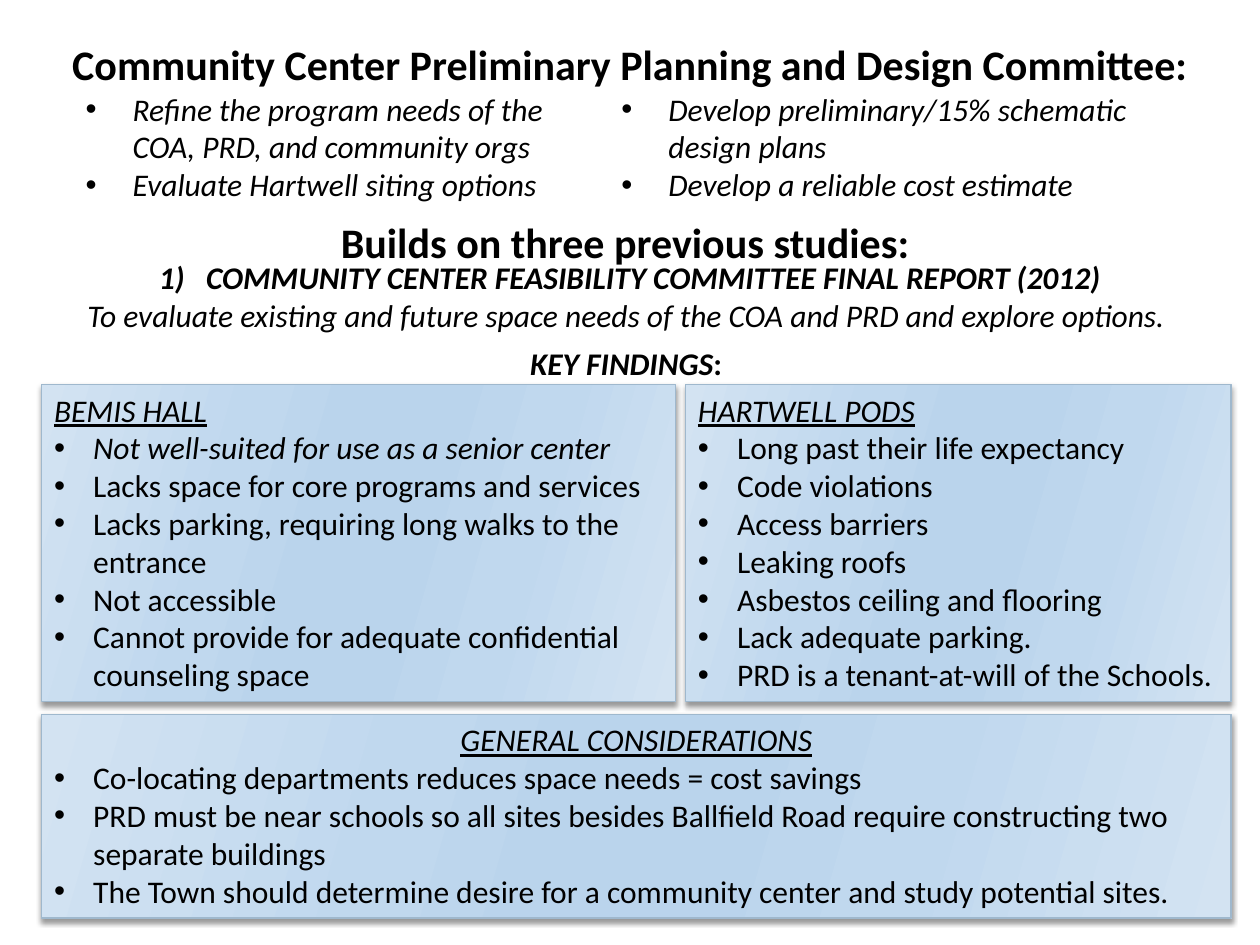
from lxml.etree import SubElement
from pptx import Presentation
from pptx.dml.color import RGBColor
from pptx.enum.shapes import MSO_SHAPE
from pptx.enum.text import MSO_ANCHOR, MSO_AUTO_SIZE as AutoSize, PP_ALIGN as Align
from pptx.oxml.ns import qn
from pptx.util import Cm, Pt

COLORS = {"text": "000000", "border": "9FB8CD", "shadow": "000000",
          "edge": "D3E3F2", "mid": "C0D8EE", "core": "BAD4EC"}
PANEL_STOPS = [(0, "edge"), (30, "mid"), (45, "core"),
               (55, "core"), (73, "mid"), (100, "edge")]
TITLE_SIZE, TEXT_SIZE = 24, 18
LIST_INDENT, PANEL_INDENT = 0.95, 0.79


def color_element(parent, name, opacity=None):
    color = SubElement(parent, qn("a:srgbClr"), val=COLORS[name])
    if opacity is not None:
        SubElement(color, qn("a:alpha"), val=str(opacity * 1000))


class SlideBuilder:
    def __init__(self, slide, font="Calibri"):
        self.slide = slide
        self.font = font

    def place(self, shape, box):
        shape.left, shape.top, shape.width, shape.height = map(Cm, box)
        frame = shape.text_frame
        frame.word_wrap = True
        frame.auto_size = AutoSize.SHAPE_TO_FIT_TEXT
        frame.vertical_anchor = MSO_ANCHOR.TOP
        return frame

    def paragraph(self, frame, runs, align=Align.LEFT, size=TEXT_SIZE,
                  bullet=None, indent=0):
        """Fill the empty first paragraph or add one; runs are (text, style letters)."""
        first = frame.paragraphs[0]
        para = frame.add_paragraph() if first.runs else first
        para.alignment = align
        para.space_before = Pt(0)
        props = para._p.get_or_add_pPr()
        props.set("marL", str(Cm(indent)))
        props.set("indent", str(-Cm(indent)))
        if bullet == "•":
            SubElement(props, qn("a:buFont"), typeface="Arial")
            SubElement(props, qn("a:buChar"), char=bullet)
        elif bullet:
            SubElement(props, qn("a:buAutoNum"), type=bullet)
        else:
            SubElement(props, qn("a:buNone"))
        for text, style in runs:
            run = para.add_run()
            run.text = text
            run.font.name = self.font
            run.font.size = Pt(size)
            run.font.bold = "b" in style
            run.font.italic = "i" in style
            run.font.underline = "u" in style
            run.font.color.rgb = RGBColor.from_string(COLORS["text"])

    def title(self, text, box):
        frame = self.place(self.slide.shapes.title, box)
        self.paragraph(frame, [(text, "b")], Align.CENTER, TITLE_SIZE)

    def body_list(self, index, items, box):
        frame = self.place(self.slide.placeholders[index], box)
        for item in items:
            self.paragraph(frame, [(item, "i")], bullet="•", indent=LIST_INDENT)

    def text(self, box, wrap=True):
        frame = self.place(self.slide.shapes.add_textbox(0, 0, 0, 0), box)
        frame.word_wrap = wrap
        return frame

    def panel(self, heading, items, box, heading_align=Align.LEFT):
        """Shaded box with an underlined heading; items are (text, style letters)."""
        shape = self.slide.shapes.add_shape(MSO_SHAPE.RECTANGLE, *map(Cm, box))
        shape.fill.gradient()
        shape.fill.gradient_angle = 360 - 16
        stops = shape._element.spPr.find(qn("a:gradFill")).find(qn("a:gsLst"))
        for stop in list(stops):
            stops.remove(stop)
        for position, name in PANEL_STOPS:
            color_element(SubElement(stops, qn("a:gs"), pos=str(position * 1000)), name)
        shape.line.color.rgb = RGBColor.from_string(COLORS["border"])
        shape.line.width = Pt(0.75)
        shape.shadow.inherit = False
        effects = shape._element.spPr.find(qn("a:effectLst"))
        shadow = SubElement(effects, qn("a:outerShdw"), blurRad=str(Pt(3)),
                            dist=str(Pt(2)), dir=str(90 * 60000), rotWithShape="0")
        color_element(shadow, "shadow", 40)
        frame = self.place(shape, box)
        self.paragraph(frame, [(heading, "iu")], heading_align)
        for text, style in items:
            self.paragraph(frame, [(text, style)], bullet="•", indent=PANEL_INDENT)


def main():
    prs = Presentation()
    prs.slide_width, prs.slide_height = Cm(25.4), Cm(19.05)
    builder = SlideBuilder(prs.slides.add_slide(prs.slide_layouts[3]))

    builder.title("Community Center Preliminary Planning and Design Committee:",
                  (0, 0.64, 25.4, 1.27))
    builder.body_list(1, ["Refine the program needs of the COA, PRD, and community orgs",
                          "Evaluate Hartwell siting options"],
                      (1.47, 1.68, 10.8, 2.57))
    builder.body_list(2, ["Develop preliminary/15% schematic design plans",
                          "Develop a reliable cost estimate"],
                      (12.27, 1.68, 12.27, 2.57))

    studies = builder.text((0, 4.24, 25.4, 1.27))
    builder.paragraph(studies, [("Builds on three previous studies: ", "b")],
                      Align.CENTER, TITLE_SIZE)
    report = builder.text((0, 5.08, 25.4, 1.8))
    builder.paragraph(
        report, [("COMMUNITY CENTER FEASIBILITY COMMITTEE FINAL REPORT (2012)", "bi")],
        Align.CENTER, bullet="arabicParenR", indent=LIST_INDENT)
    builder.paragraph(
        report, [("To evaluate existing and future space needs of the COA and PRD "
                  "and explore options. ", "i")], Align.CENTER)
    findings = builder.text((10.41, 6.81, 4.57, 1.02), wrap=False)
    builder.paragraph(findings, [("KEY FINDINGS", "bi"), (": ", "b")], Align.CENTER)

    builder.panel("BEMIS HALL", [
        ("Not well-suited for use as a senior center", "i"),
        ("Lacks space for core programs and services", ""),
        ("Lacks parking, requiring long walks to the entrance", ""),
        ("Not accessible", ""),
        ("Cannot provide for adequate confidential counseling space", ""),
    ], (0.84, 7.75, 12.78, 6.4))
    builder.panel("HARTWELL PODS", [
        ("Long past their life expectancy", ""),
        ("Code violations", ""),
        ("Access barriers", ""),
        ("Leaking roofs", ""),
        ("Asbestos ceiling and flooring", ""),
        ("Lack adequate parking.", ""),
        ("PRD is a tenant-at-will of the Schools.", ""),
    ], (13.82, 7.75, 11, 6.4))
    builder.panel("GENERAL CONSIDERATIONS", [
        ("Co-locating departments reduces space needs = cost savings", ""),
        ("PRD must be near schools so all sites besides Ballfield Road "
         "require constructing two separate buildings", ""),
        ("The Town should determine desire for a community center "
         "and study potential sites.", ""),
    ], (0.84, 14.4, 23.98, 4.11), Align.CENTER)

    prs.save("out.pptx")


if __name__ == "__main__":
    main()
